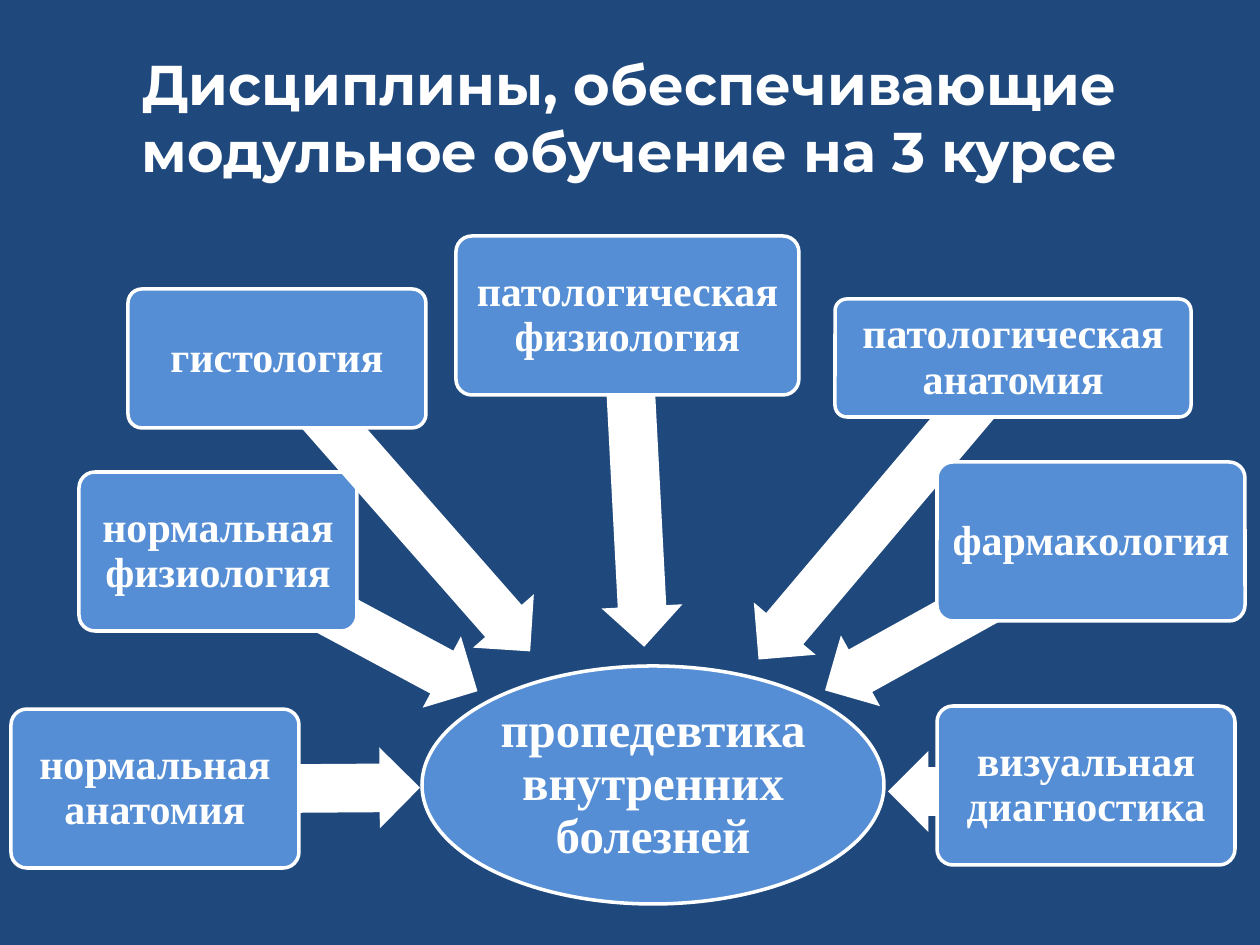
from pptx import Presentation
from pptx import util as u
from pptx.dml.color import RGBColor
from pptx.enum import shapes, text

PX = u.Inches(1) / 126  # EMU per px
THEME = {
    "background": RGBColor(0x1F, 0x49, 0x7D),
    "node": RGBColor(0x55, 0x8E, 0xD5),
    "light": RGBColor(0xFF, 0xFF, 0xFF),
    "outline": u.Pt(2),
    "title": {"name": "Montserrat", "size": u.Pt(32), "bold": True},
    "center": {"name": "Times New Roman", "size": u.Pt(28), "bold": True},
    "discipline": {"name": "Times New Roman", "size": u.Pt(24), "bold": True},
}
ARROW_HEIGHT = 81


def px(*lengths):
    return [round(length * PX) for length in lengths]


def add_node(kind, place, words, style, inset):
    node = slide.shapes.add_shape(kind, *px(*place))
    node.shadow.inherit = False
    node.fill.solid()
    node.fill.fore_color.rgb = THEME["node"]
    node.line.color.rgb = THEME["light"]
    node.line.width = THEME["outline"]
    frame = node.text_frame
    frame.word_wrap = True
    frame.vertical_anchor = text.MSO_ANCHOR.MIDDLE
    for side in ("left", "top", "right", "bottom"):
        setattr(frame, f"margin_{side}", px(inset)[0])
    paragraph = frame.paragraphs[0]
    paragraph.text = words
    paragraph.alignment = text.PP_ALIGN.CENTER
    paragraph.line_spacing = 0.9
    paragraph.font.color.rgb = THEME["light"]
    for attribute, value in THEME[style].items():
        setattr(paragraph.font, attribute, value)
    return node


prs = Presentation()
prs.slide_width, prs.slide_height = px(1260, 945)
slide = prs.slides.add_slide(prs.slide_layouts[5])
slide.background.fill.solid()
slide.background.fill.fore_color.rgb = THEME["background"]

# Title
title = slide.shapes.title
title.left, title.top, title.width, title.height = px(63, 38, 1134, 158)
title.text_frame.text = "Дисциплины, обеспечивающие модульное обучение на 3 курсе"
title.text_frame.vertical_anchor = text.MSO_ANCHOR.MIDDLE
heading = title.text_frame.paragraphs[0]
heading.alignment = text.PP_ALIGN.CENTER
heading.font.color.rgb = THEME["light"]
for attribute, value in THEME["title"].items():
    setattr(heading.font, attribute, value)

# Central subject
add_node(shapes.MSO_SHAPE.OVAL, (422, 666, 462, 238),
         "пропедевтика внутренних болезней", "center", 2)

# Disciplines: words, box place, arrow (left, top, length, rotation)
disciplines = [
    ("нормальная анатомия", (11, 709, 288, 159), (168, 748, 252, 179.6)),
    ("нормальная физиология", (79, 472, 278, 159), (200, 581, 295, 208.2)),
    ("гистология", (128, 289, 298, 139), (199, 461, 399, 228.7)),
    ("патологическая физиология", (456, 236, 343, 159), (470, 441, 331, 267)),
    ("патологическая анатомия", (835, 299, 356, 118), (689, 469, 393, 310.2)),
    ("фармакология", (937, 462, 308, 159), (806, 576, 305, 331)),
    ("визуальная диагностика", (937, 706, 298, 159), (888, 751, 193, 0)),
]
for words, place, (left, top, length, rotation) in disciplines:
    # Arrow towards the central subject, partly behind its box
    arrow = slide.shapes.add_shape(
        shapes.MSO_SHAPE.LEFT_ARROW, *px(left, top, length, ARROW_HEIGHT))
    arrow.adjustments[0] = 0.6
    arrow.adjustments[1] = 0.5
    arrow.rotation = rotation
    arrow.shadow.inherit = False
    arrow.fill.solid()
    arrow.fill.fore_color.rgb = THEME["light"]
    arrow.line.fill.background()

    box = add_node(shapes.MSO_SHAPE.ROUNDED_RECTANGLE, place, words,
                   "discipline", 6)
    box.adjustments[0] = 0.1

prs.save("out.pptx")
